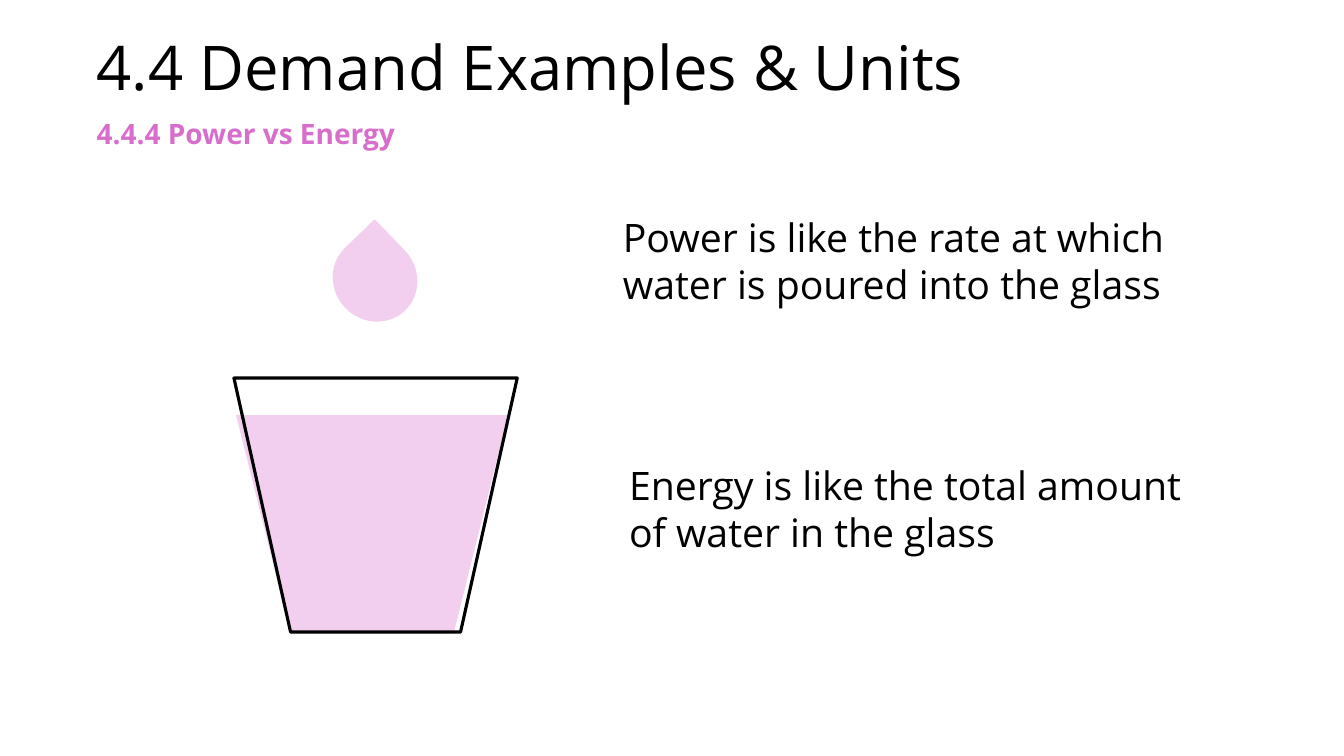
from pptx import Presentation
from pptx import util as u
from pptx.dml.color import RGBColor
from pptx.enum import shapes, text

BLACK, ORCHID, WATER, WHITE = "000000", "D86ECC", "F2CFEE", "FFFFFF"
FONT = "Open Sans"
MARGIN, TEXT_WIDTH = 0.86, 5.91


def colour(value):
    """Turn a hex string into a colour."""
    return RGBColor.from_string(value)


def add_text(page, words, place, size, ink=BLACK, bold=False, after=12,
             spacing=None, anchor=text.MSO_ANCHOR.TOP,
             fit=text.MSO_AUTO_SIZE.SHAPE_TO_FIT_TEXT):
    """Add a wrapped text box with one paragraph."""
    box = page.shapes.add_textbox(*map(u.Inches, place))
    frame = box.text_frame
    frame.word_wrap = True
    frame.auto_size = fit
    frame.vertical_anchor = anchor
    para = frame.paragraphs[0]
    para.text = words
    para.space_after = u.Pt(after)
    para.line_spacing = spacing
    font = para.font
    font.name, font.size, font.bold = FONT, u.Pt(size), bold
    font.color.rgb = colour(ink)


def add_figure(page, kind, place, line, weight, fill=None, rotation=0):
    """Add an outlined preset shape, filled when a fill is given."""
    figure = page.shapes.add_shape(kind, *map(u.Inches, place))
    figure.shadow.inherit = False
    figure.rotation = rotation
    if fill:
        figure.fill.solid()
        figure.fill.fore_color.rgb = colour(fill)
    else:
        figure.fill.background()
    figure.line.color.rgb = colour(line)
    figure.line.width = u.Pt(weight)


def main():
    """Build the slide about power and energy."""
    deck = Presentation()
    deck.slide_width, deck.slide_height = u.Inches(13.33), u.Inches(7.5)
    page = deck.slides.add_slide(deck.slide_layouts[6])
    kinds = shapes.MSO_SHAPE
    glass = kinds.FLOWCHART_MANUAL_OPERATION

    add_text(page, "4.4 Demand Examples & Units", (MARGIN, -0.42, 10.84, 1.5),
             44, after=0, spacing=0.9, anchor=text.MSO_ANCHOR.BOTTOM,
             fit=text.MSO_AUTO_SIZE.NONE)
    add_text(page, "4.4.4 Power vs Energy\u00a0".strip(), (MARGIN, 1.11, 8.81, 0.44),
             20, ink=ORCHID, bold=True)
    add_figure(page, glass, (2.32, 4.1, 2.74, 2.2), WHITE, 2.25, fill=WATER)
    add_figure(page, kinds.TEAR, (3.32, 2.35, 0.8, 0.84), WATER, 1.5,
               fill=WATER, rotation=316)
    add_text(page, "Power is like the rate at which water is poured into the glass",
             (6.08, 2.07, TEXT_WIDTH, 1.04), 28)
    add_text(page, "Energy is like the total amount of water in the glass",
             (6.14, 4.53, TEXT_WIDTH, 1.04), 28)
    add_figure(page, glass, (2.32, 3.75, 2.81, 2.52), BLACK, 2.25)
    deck.save("out.pptx")


if __name__ == "__main__":
    main()
